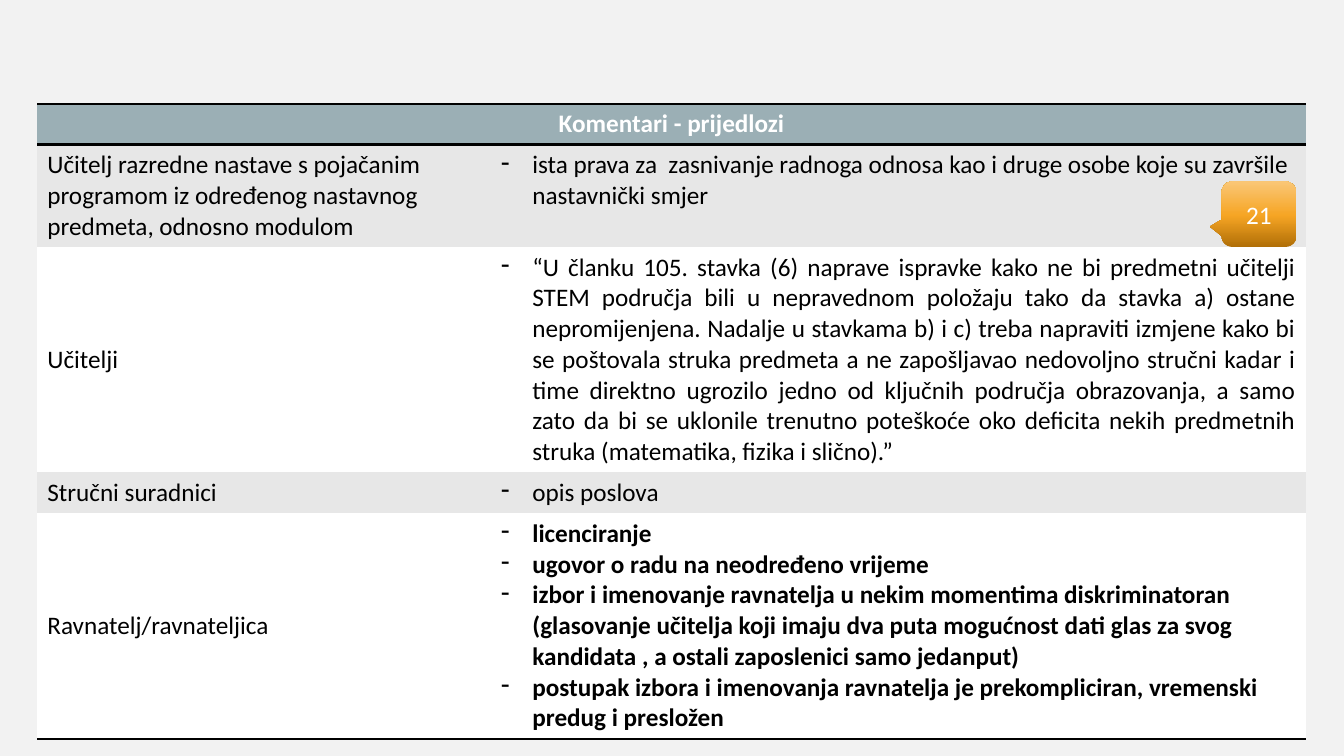
import copy

import lxml.etree
import pptx
import pptx.dml.color
import pptx.enum.shapes
import pptx.enum.text
import pptx.oxml.ns
import pptx.util

SLIDE_WIDTH, SLIDE_HEIGHT = 13.33, 7.5
TABLE_LEFT, TABLE_TOP = 0.37, 1.03
ROLE_WIDTH, PROPOSAL_WIDTH = 4.5, 8.08
LINE_HEIGHT, ROW_PADDING = 0.305, 0.1
DASH_INDENT = 0.31
FONT, FONT_SIZE = "Calibri", 18
BLACK, WHITE = "000000", "FFFFFF"
HEADER_FILL, BAND_FILLS = "9BAFB5", ("E7E7E7", WHITE)
NO_GRID_STYLE = "{2D5ABB26-0587-4C30-8999-92F81FD0307C}"

ALIGN = pptx.enum.text.PP_ALIGN
ANCHOR = pptx.enum.text.MSO_ANCHOR
inches = pptx.util.Inches
qn = pptx.oxml.ns.qn

HEADING = "Komentari - prijedlozi"

# Role, proposals, height in text lines, role anchor, proposal alignment, bold
PROPOSAL_ROWS = [
    ("Učitelj razredne nastave s pojačanim programom iz određenog nastavnog "
     "predmeta, odnosno modulom",
     ["ista prava za  zasnivanje radnoga odnosa kao i druge osobe koje su "
      "završile nastavnički smjer"],
     3, ANCHOR.TOP, ALIGN.LEFT, False),
    ("Učitelji",
     ["“U članku 105. stavka (6) naprave ispravke kako ne bi predmetni učitelji "
      "STEM područja bili u nepravednom položaju tako da stavka a) ostane "
      "nepromijenjena. Nadalje u stavkama b) i c) treba napraviti izmjene kako "
      "bi se poštovala struka predmeta a ne zapošljavao nedovoljno stručni "
      "kadar i time direktno ugrozilo jedno od ključnih područja obrazovanja, "
      "a samo zato da bi se uklonile trenutno poteškoće oko deficita nekih "
      "predmetnih struka (matematika, fizika i slično).”"],
     7, ANCHOR.MIDDLE, ALIGN.JUSTIFY, False),
    ("Stručni suradnici", ["opis poslova"], 1, ANCHOR.TOP, ALIGN.LEFT, False),
    ("Ravnatelj/ravnateljica",
     ["licenciranje",
      "ugovor o radu na neodređeno vrijeme",
      "izbor i imenovanje ravnatelja u nekim momentima diskriminatoran "
      "(glasovanje učitelja koji imaju dva puta mogućnost dati glas za svog "
      "kandidata , a ostali zaposlenici samo jedanput)",
      "postupak izbora i imenovanja ravnatelja je prekompliciran, vremenski "
      "predug i presložen"],
     7, ANCHOR.MIDDLE, ALIGN.LEFT, True),
]


def color(hex_code):
    return pptx.dml.color.RGBColor.from_string(hex_code)


def write(frame, texts, hex_code=BLACK, bold=False, align=ALIGN.LEFT, dashed=False):
    """Write one paragraph per text, with hanging dashes if asked."""
    for index, text in enumerate(texts):
        paragraph = frame.add_paragraph() if index else frame.paragraphs[0]
        paragraph.alignment = align
        run = paragraph.add_run()
        run.text = text
        run.font.name = FONT
        run.font.size = pptx.util.Pt(FONT_SIZE)
        run.font.bold = bold
        run.font.color.rgb = color(hex_code)
        if dashed:
            properties = paragraph.runs[0].font and paragraph._p.get_or_add_pPr()
            properties.set("marL", str(inches(DASH_INDENT)))
            properties.set("indent", str(-inches(DASH_INDENT)))
            lxml.etree.SubElement(properties, qn("a:buChar"), char="-")


def rule_cell(cell, *sides):
    """Draw black 2 pt rules on the given sides (lnT, lnB)."""
    properties = cell._tc.get_or_add_tcPr()
    for side in sides:
        rule = lxml.etree.SubElement(
            properties, qn("a:" + side), w=str(pptx.util.Pt(2)))
        solid = lxml.etree.SubElement(rule, qn("a:solidFill"))
        lxml.etree.SubElement(solid, qn("a:srgbClr"), val=BLACK)


def fill_cell(cell, hex_code, anchor=ANCHOR.TOP):
    cell.fill.solid()
    cell.fill.fore_color.rgb = color(hex_code)
    cell.vertical_anchor = anchor


def add_proposals_table(slide):
    heights = [LINE_HEIGHT * lines + ROW_PADDING
               for lines in [1] + [row[2] for row in PROPOSAL_ROWS]]
    frame = slide.shapes.add_table(
        len(heights), 2, inches(TABLE_LEFT), inches(TABLE_TOP),
        inches(ROLE_WIDTH + PROPOSAL_WIDTH), inches(sum(heights)))
    table = frame.table
    frame.element.find(".//" + qn("a:tableStyleId")).text = NO_GRID_STYLE
    for column, width in zip(table.columns, (ROLE_WIDTH, PROPOSAL_WIDTH)):
        column.width = inches(width)
    for row, height in zip(table.rows, heights):
        row.height = inches(height)

    # Heading and outer rules
    for column in range(2):
        rule_cell(table.cell(0, column), "lnT", "lnB")
        rule_cell(table.cell(len(PROPOSAL_ROWS), column), "lnB")
        fill_cell(table.cell(0, column), HEADER_FILL, ANCHOR.MIDDLE)
    heading = table.cell(0, 0)
    heading.merge(table.cell(0, 1))
    write(heading.text_frame, [HEADING], WHITE, True, ALIGN.CENTER)

    # Roles and their proposals
    for index, (role, proposals, _, anchor, align, bold) in enumerate(PROPOSAL_ROWS):
        role_cell, proposal_cell = table.rows[index + 1].cells
        band = BAND_FILLS[index % 2]
        fill_cell(role_cell, band, anchor)
        fill_cell(proposal_cell, band)
        write(role_cell.text_frame, [role])
        write(proposal_cell.text_frame, proposals, bold=bold, align=align, dashed=True)


def add_count_callout(slide, count):
    callout = slide.shapes.add_shape(
        pptx.enum.shapes.MSO_SHAPE.ROUNDED_RECTANGULAR_CALLOUT,
        inches(SLIDE_WIDTH * 0.909), inches(SLIDE_HEIGHT * 0.24),
        inches(0.74), inches(0.65))
    for index, value in enumerate((-0.657, 0.189, 0.167)):
        callout.adjustments[index] = value
    callout.shadow.inherit = False
    callout.line.fill.background()

    # Three-stop gradient, dark at the bottom
    callout.fill.gradient()
    callout.fill.gradient_angle = 90
    stop_list = callout.element.find(".//" + qn("a:gsLst"))
    stop_list.append(copy.deepcopy(stop_list[-1]))
    shades = ((0, "B16F07"), (0.48, "F6A524"), (1, "FAC777"))
    for stop, (position, shade) in zip(callout.fill.gradient_stops, shades):
        stop.position = position
        stop.color.rgb = color(shade)

    callout.text_frame.vertical_anchor = ANCHOR.MIDDLE
    callout.text_frame.word_wrap = True
    write(callout.text_frame, [count], WHITE, align=ALIGN.CENTER)


def main():
    deck = pptx.Presentation()
    deck.slide_width = inches(SLIDE_WIDTH)
    deck.slide_height = inches(SLIDE_HEIGHT)
    slide = deck.slides.add_slide(deck.slide_layouts[6])
    slide.background.fill.solid()
    slide.background.fill.fore_color.rgb = color("F2F2F2")
    add_proposals_table(slide)
    add_count_callout(slide, "21")
    deck.save("out.pptx")


if __name__ == "__main__":
    main()
